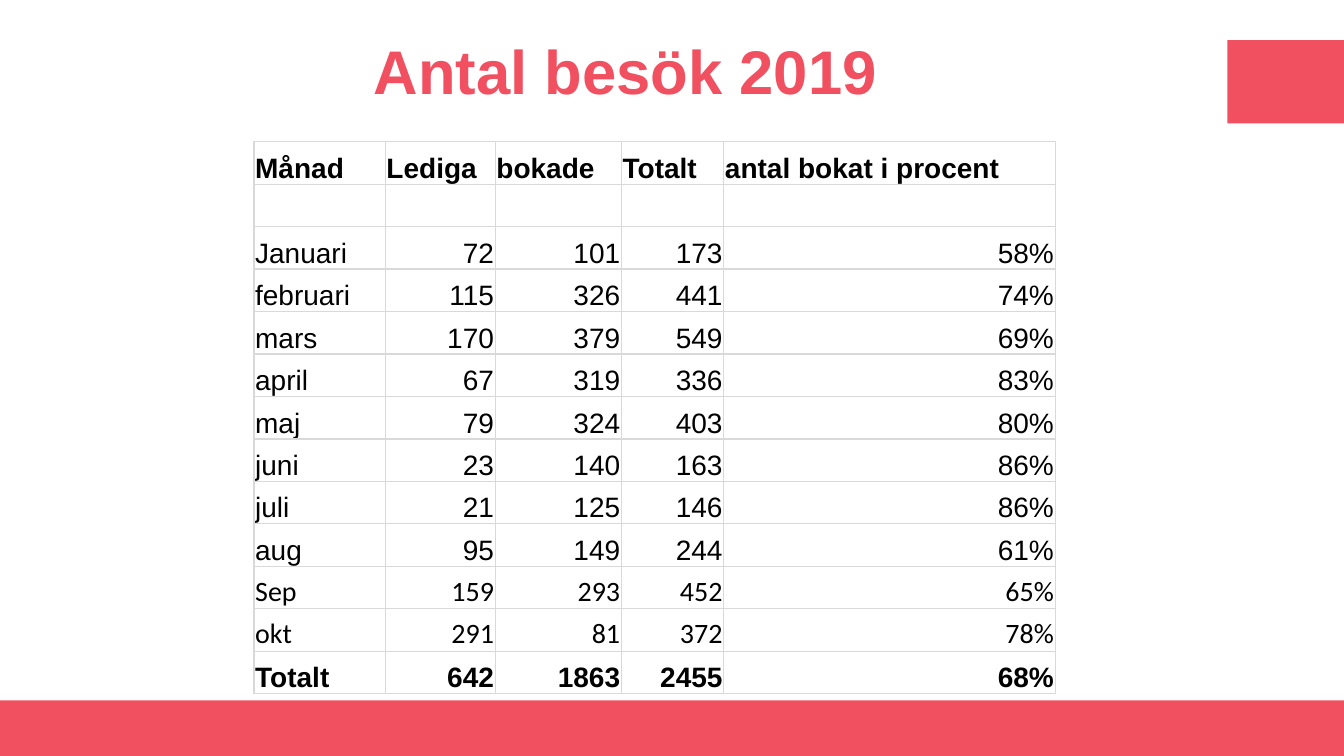
from dataclasses import dataclass

from lxml.etree import SubElement
from pptx import Presentation
from pptx.dml.color import RGBColor as Rgb
from pptx.enum.shapes import MSO_SHAPE as Preset
from pptx.enum.text import MSO_ANCHOR as Anchor, PP_ALIGN as Align
from pptx.oxml.ns import qn
from pptx.slide import Slide
from pptx.table import _Cell as Cell
from pptx.text.text import _Paragraph as Paragraph
from pptx.util import Cm, Pt


@dataclass(frozen=True)
class Theme:
    accent: Rgb = Rgb(0xF1, 0x50, 0x60)
    text: Rgb = Rgb(0, 0, 0)
    cell: Rgb = Rgb(0xFF, 0xFF, 0xFF)
    grid: Rgb = Rgb(0xD9, 0xD9, 0xD9)
    font: str = "Arial"
    late_font: str = "Calibri"
    title_size: Pt = Pt(44)
    table_size: Pt = Pt(20)
    grid_width: Pt = Pt(1)


THEME = Theme()


@dataclass(frozen=True)
class Band:
    left: float
    top: float
    width: float
    height: float


@dataclass(frozen=True)
class VisitRow:
    values: tuple[str, ...]
    font: str = THEME.font
    bold: bool = False
    header: bool = False


BANDS = (
    Band(0, 17.65, 33.87, 1.4),
    Band(30.93, 1.01, 2.94, 2.1),
)
COLUMN_WIDTHS = (3.31, 2.77, 3.18, 2.58, 8.35)
ROW_HEIGHT = 1.07
VISITS = (
    VisitRow(("Månad", "Lediga", "bokade", "Totalt", "antal bokat i procent"),
             bold=True, header=True),
    VisitRow(("",) * len(COLUMN_WIDTHS)),
    VisitRow(("Januari", "72", "101", "173", "58%")),
    VisitRow(("februari", "115", "326", "441", "74%")),
    VisitRow(("mars", "170", "379", "549", "69%")),
    VisitRow(("april", "67", "319", "336", "83%")),
    VisitRow(("maj", "79", "324", "403", "80%")),
    VisitRow(("juni", "23", "140", "163", "86%")),
    VisitRow(("juli", "21", "125", "146", "86%")),
    VisitRow(("aug", "95", "149", "244", "61%")),
    VisitRow(("Sep", "159", "293", "452", "65%"), font=THEME.late_font),
    VisitRow(("okt", "291", "81", "372", "78%"), font=THEME.late_font),
    VisitRow(("Totalt", "642", "1863", "2455", "68%"), bold=True),
)


def add_band(slide: Slide, band: Band) -> None:
    shape = slide.shapes.add_shape(
        Preset.RECTANGLE, Cm(band.left), Cm(band.top), Cm(band.width), Cm(band.height))
    shape.shadow.inherit = False
    shape.fill.solid()
    shape.fill.fore_color.rgb = THEME.accent
    shape.line.fill.background()


def add_span(para: Paragraph, text: str, font: str, size: Pt, color: Rgb, bold: bool) -> None:
    span = para.add_run()
    span.text = text
    span.font.name = font
    span.font.size = size
    span.font.bold = bold
    span.font.color.rgb = color


def add_title(slide: Slide, text: str) -> None:
    box = slide.shapes.add_textbox(Cm(1.02), Cm(0.2), Cm(29.49), Cm(3.35))
    frame = box.text_frame
    frame.word_wrap = True
    frame.vertical_anchor = Anchor.MIDDLE
    para = frame.paragraphs[0]
    para.alignment = Align.CENTER
    para.line_spacing = 0.9
    add_span(para, text, THEME.font, THEME.title_size, THEME.accent, True)


def add_borders(cell: Cell) -> None:
    """Draw all four sides; must run before the cell fill is set."""
    properties = cell._tc.get_or_add_tcPr()
    for side in ("a:lnL", "a:lnR", "a:lnT", "a:lnB"):
        line = SubElement(properties, qn(side), w=str(THEME.grid_width))
        fill = SubElement(line, qn("a:solidFill"))
        SubElement(fill, qn("a:srgbClr"), val=str(THEME.grid))


def fill_cell(cell: Cell, text: str, row: VisitRow, align: Align) -> None:
    add_borders(cell)
    cell.fill.solid()
    cell.fill.fore_color.rgb = THEME.cell
    cell.vertical_anchor = Anchor.BOTTOM
    cell.margin_left = cell.margin_right = cell.margin_top = Cm(0.03)
    cell.margin_bottom = Cm(0)
    if text:
        para = cell.text_frame.paragraphs[0]
        para.alignment = align
        add_span(para, text, row.font, THEME.table_size, THEME.text, row.bold)


def add_visit_table(slide: Slide) -> None:
    table = slide.shapes.add_table(
        len(VISITS), len(COLUMN_WIDTHS), Cm(6.4), Cm(3.57),
        Cm(sum(COLUMN_WIDTHS)), Cm(ROW_HEIGHT * len(VISITS))).table
    table.horz_banding = False
    table.first_row = False
    for column, width in zip(table.columns, COLUMN_WIDTHS):
        column.width = Cm(width)
    for row_index, row in enumerate(VISITS):
        table.rows[row_index].height = Cm(ROW_HEIGHT)
        for column_index, text in enumerate(row.values):
            align = Align.LEFT if row.header or column_index == 0 else Align.RIGHT
            fill_cell(table.cell(row_index, column_index), text, row, align)


def main() -> None:
    deck = Presentation()
    deck.slide_width, deck.slide_height = Cm(33.87), Cm(19.05)
    page = deck.slides.add_slide(deck.slide_layouts[6])
    for band in BANDS:
        add_band(page, band)
    add_title(page, "Antal besök 2019")
    add_visit_table(page)
    deck.save("out.pptx")


if __name__ == "__main__":
    main()
